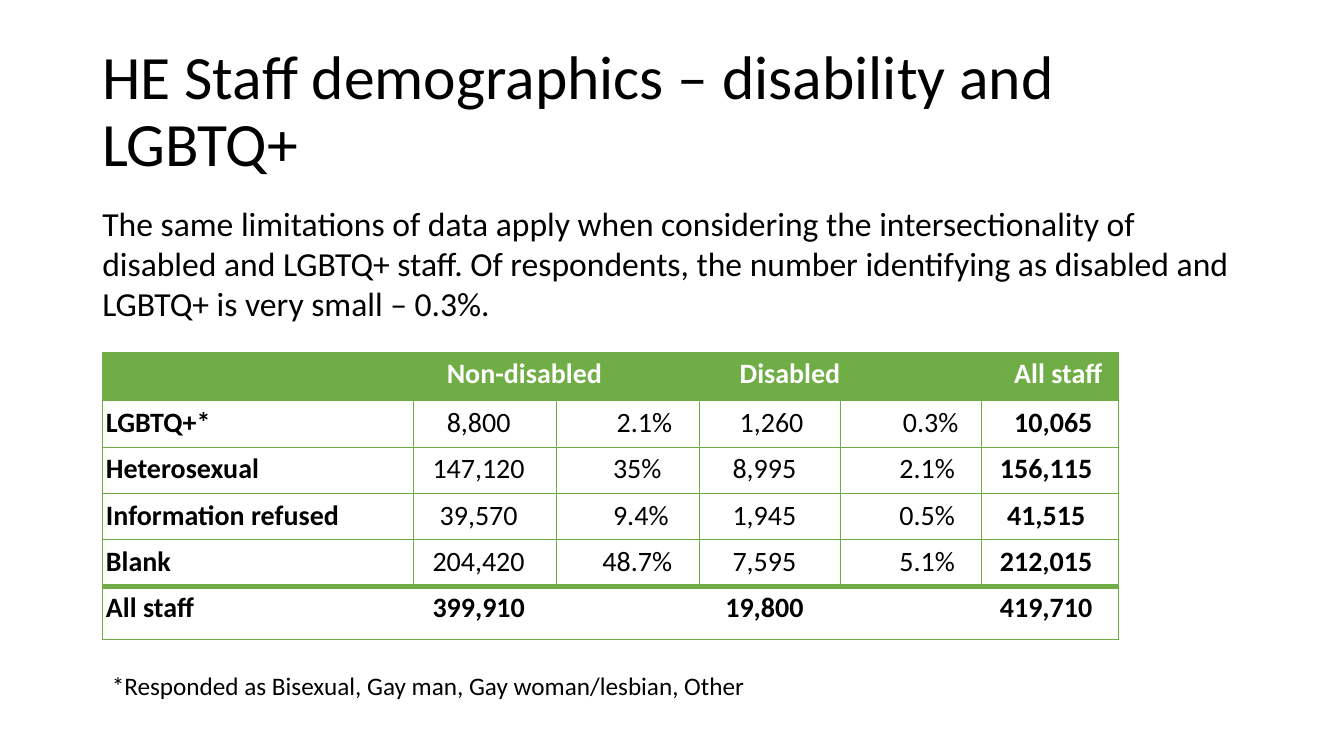
"""Build the slide on HE staff demographics by disability and LGBTQ+ identity."""
from lxml.etree import SubElement
from pptx import Presentation
from pptx.dml.color import RGBColor
from pptx.enum.text import MSO_ANCHOR as Anchor, MSO_AUTO_SIZE as AutoSize, PP_ALIGN as Align
from pptx.oxml.ns import qn
from pptx.util import Cm, Pt

COLOURS = {"text": "000000", "header": "FFFFFF", "green": "70AD47"}


def add_run(paragraph, words, size, colour="text", bold=False):
    run = paragraph.add_run()
    run.text = words
    run.font.name = "Calibri"
    run.font.size = Pt(size)
    run.font.bold = bold
    run.font.color.rgb = RGBColor.from_string(COLOURS[colour])


def add_border(cell, side, width):
    line = SubElement(cell._tc.get_or_add_tcPr(), qn(f"a:ln{side}"), w=str(Pt(width)))
    if width:
        fill = SubElement(line, qn("a:solidFill"))
        SubElement(fill, qn("a:srgbClr"), val=COLOURS["green"])
    else:
        SubElement(line, qn("a:noFill"))


deck = Presentation()
deck.slide_width, deck.slide_height = Cm(33.87), Cm(19.05)
slide = deck.slides.add_slide(deck.slide_layouts[6])

title = slide.shapes.add_textbox(Cm(2.33), Cm(1.01), Cm(29.21), Cm(3.68)).text_frame
title.word_wrap = True
title.vertical_anchor = Anchor.MIDDLE
title.paragraphs[0].line_spacing = 0.9
add_run(title.paragraphs[0], "HE Staff demographics – disability and LGBTQ+", 44)

staff_rows = [
    (["", "Non-disabled", "", "Disabled", "", "All staff"], (0.84, 1.02, 0.84)),
    (["LGBTQ+*", "8,800", "2.1%", "1,260", "0.3%", "10,065"], (0.84, 1.02, 0.84)),
    (["Heterosexual", "147,120", "35%", "8,995", "2.1%", "156,115"], (0.48, 0.84, 0.48)),
    (["Information refused", "39,570", "9.4%", "1,945", "0.5%", "41,515"], (0.66, 0.84, 0.66)),
    (["Blank", "204,420", "48.7%", "7,595", "5.1%", "212,015"], (0.48, 0.84, 0.48)),
    (["All staff", "399,910", "", "19,800", "", "419,710"], (0.48, 0.66, 0.48)),
]
column_widths = [7.85, 3.6, 3.6, 3.55, 3.55, 3.45]
row_heights = [1.22, 1.17, 1.17, 1.17, 1.17, 1.35]
total_row = len(staff_rows) - 1
last_column = len(column_widths) - 1

staff = slide.shapes.add_table(len(row_heights), len(column_widths), Cm(2.57), Cm(8.87),
                               Cm(sum(column_widths)), Cm(sum(row_heights))).table
for column, width in zip(staff.columns, column_widths):
    column.width = Cm(width)
for row, height in zip(staff.rows, row_heights):
    row.height = Cm(height)
for first in (1, 3):
    staff.cell(0, first).merge(staff.cell(0, first + 1))

for r, (entries, (non_disabled, disabled, everyone)) in enumerate(staff_rows):
    indents = [0.1, non_disabled, non_disabled, disabled, disabled, everyone]
    for c, (entry, indent) in enumerate(zip(entries, indents)):
        cell = staff.cell(r, c)
        cell.margin_left = cell.margin_right = cell.margin_top = cell.margin_bottom = 0
        add_border(cell, "L", 0.5 if r < total_row or c == 0 else 0)
        add_border(cell, "R", 0.5 if r < total_row or c == last_column else 0)
        add_border(cell, "T", 4 if r == total_row else 0.5)
        add_border(cell, "B", 4 if r == total_row - 1 else 0.5)
        if r == 0:
            cell.fill.solid()
            cell.fill.fore_color.rgb = RGBColor.from_string(COLOURS["green"])
        else:
            cell.fill.background()
        if entry:
            paragraph = cell.text_frame.paragraphs[0]
            paragraph.line_spacing = 1.15
            paragraph.space_before = Pt(1.1 if r == 0 else 0.1)
            paragraph.alignment = Align.CENTER if entry.endswith("%") else Align.LEFT
            properties = paragraph._p.get_or_add_pPr()
            properties.set("marL", str(Cm(indent)))
            properties.set("indent", "0")
            add_run(paragraph, entry, 20, "text" if r else "header",
                    r in (0, total_row) or c in (0, last_column))

notes = [
    ("*Responded as Bisexual, Gay man, Gay woman/lesbian, Other", 18, 2.57, 16.76, 20.5, 1.03),
    ("The same limitations of data apply when considering the intersectionality of disabled "
     "and LGBTQ+ staff. Of respondents, the number identifying as disabled and LGBTQ+ is very "
     "small – 0.3%.", 24, 2.33, 4.98, 29.21, 3.33),
]
for words, size, left, top, width, height in notes:
    note = slide.shapes.add_textbox(Cm(left), Cm(top), Cm(width), Cm(height)).text_frame
    note.word_wrap = True
    note.auto_size = AutoSize.SHAPE_TO_FIT_TEXT
    add_run(note.paragraphs[0], words, size)

deck.save("out.pptx")
